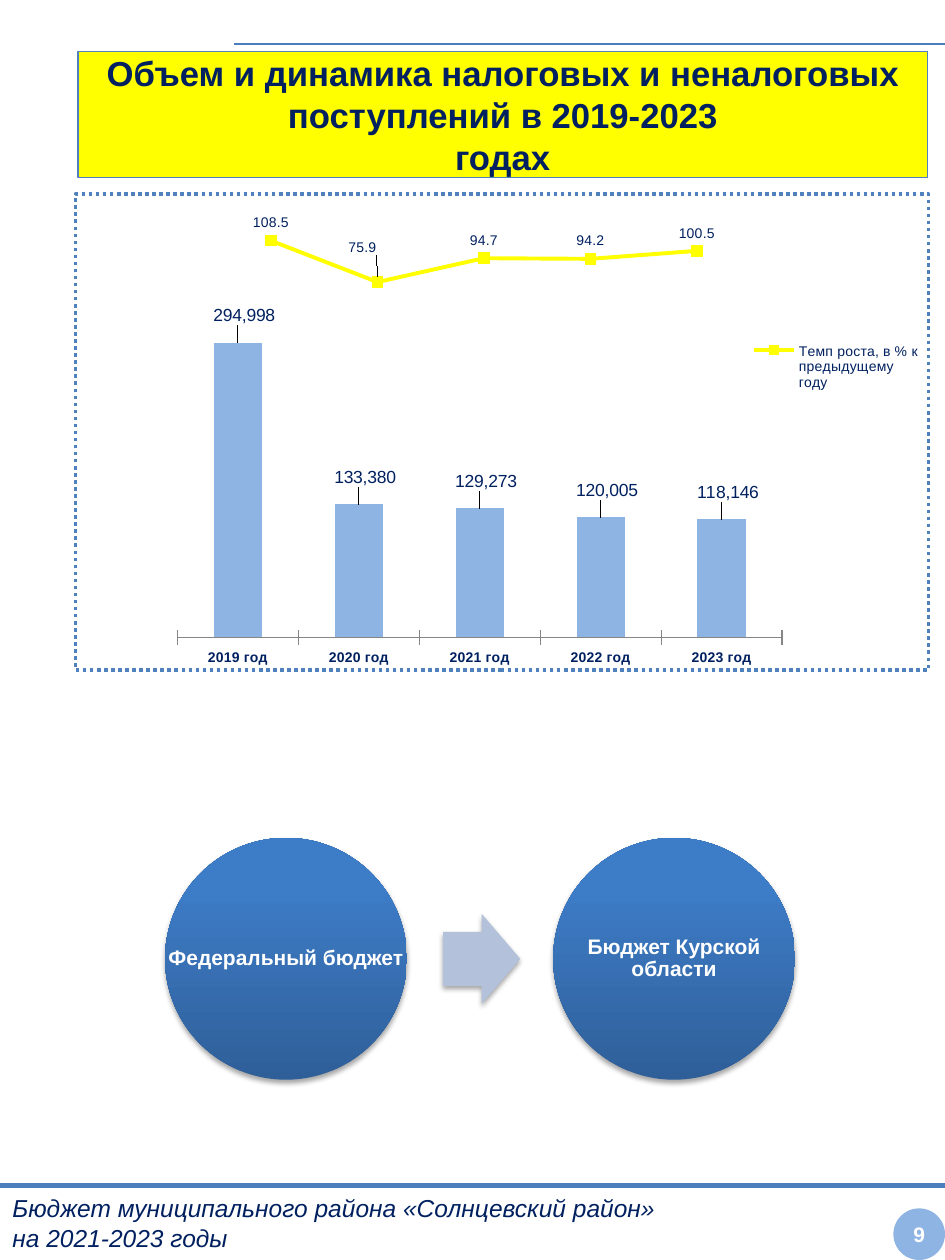
from copy import deepcopy

from lxml import etree
from pptx import Presentation
from pptx.chart.data import CategoryChartData
from pptx.dml.color import RGBColor
from pptx.enum.chart import (
    XL_CHART_TYPE as ChartType,
    XL_LABEL_POSITION as LabelPosition,
    XL_LEGEND_POSITION as LegendPosition,
    XL_MARKER_STYLE as MarkerStyle,
    XL_TICK_LABEL_POSITION as TickLabels,
    XL_TICK_MARK as TickMark,
)
from pptx.enum.dml import MSO_LINE as LineDash
from pptx.enum.shapes import MSO_CONNECTOR as Connector, MSO_SHAPE as Shape
from pptx.enum.text import MSO_ANCHOR as Anchor, MSO_AUTO_SIZE as AutoSize, PP_ALIGN as Align
from pptx.oxml import parse_xml
from pptx.oxml.ns import nsdecls, qn
from pptx.util import Pt

NAVY, WHITE, YELLOW = "002060", "FFFFFF", "FFFF00"
OUTLINE, RULE, LIGHT_BLUE = "4F81BD", "4B7EBC", "8EB4E3"
ARROW, DARK_BLUE, BRIGHT_BLUE = "B3C1DB", "2F5F99", "3D7CC7"


def color(value):
    return RGBColor.from_string(value)


def paint(fill, value):
    fill.solid()
    fill.fore_color.rgb = color(value)


def style_font(font, size, value, bold=False, italic=False):
    font.name = "Arial"
    font.size = Pt(size)
    font.color.rgb = color(value)
    font.bold, font.italic = bold, italic


def write(shape, text, size, value, align=Align.CENTER, margin=None, spacing=None, **style):
    frame = shape.text_frame
    frame.text = text
    frame.word_wrap = True
    frame.auto_size = AutoSize.NONE
    frame.vertical_anchor = Anchor.MIDDLE
    if margin is not None:
        frame.margin_left = frame.margin_right = Pt(margin)
        frame.margin_top = frame.margin_bottom = Pt(margin)
    for paragraph in frame.paragraphs:
        paragraph.alignment = align
        paragraph.line_spacing = spacing
        for run in paragraph.runs:
            style_font(run.font, size, value, **style)


def add_shape(slide, kind, box, fill):
    shape = slide.shapes.add_shape(kind, *map(Pt, box))
    shape.shadow.inherit = False
    paint(shape.fill, fill)
    shape.line.fill.background()
    return shape


def add_rule(slide, left, right, y, weight):
    line = slide.shapes.add_connector(Connector.STRAIGHT, Pt(left), Pt(y), Pt(right), Pt(y))
    line.line.color.rgb = color(RULE)
    line.line.width = Pt(weight)
    etree.SubElement(line._element.spPr, qn("a:effectLst"))


def add_soft_shadow(shape):
    effects = shape._element.spPr.find(qn("a:effectLst"))
    effects.append(parse_xml(
        f'<a:outerShdw {nsdecls("a")} blurRad="{Pt(3.1)}" dist="{Pt(1.8)}" dir="5400000" '
        'rotWithShape="0"><a:srgbClr val="000000"><a:alpha val="35000"/></a:srgbClr></a:outerShdw>'))


def manual_layout(**values):
    parts = "".join(f'<c:{key} val="{value}"/>' for key, value in values.items())
    return parse_xml(f'<c:layout {nsdecls("c")}><c:manualLayout>{parts}</c:manualLayout></c:layout>')


def set_layout(element, index, x, y, w, h, **target):
    for old in element.findall(qn("c:layout")):
        element.remove(old)
    element.insert(index, manual_layout(**target, xMode="edge", yMode="edge", x=x, y=y, w=w, h=h))


def shift_labels(labels, points, x, y):
    shared = [child for child in labels._element if child.tag != qn("c:showLeaderLines")]
    for position, point in enumerate(points):
        label = parse_xml(f'<c:dLbl {nsdecls("c")}><c:idx val="{point}"/></c:dLbl>')
        label.append(manual_layout(x=x, y=y))
        label.extend(deepcopy(child) for child in shared)
        labels._element.insert(position, label)


def add_chart(slide, kind, box, categories, name, values, number_format, plot, maximum):
    data = CategoryChartData(number_format=number_format)
    data.categories = categories
    data.add_series(name, values)
    chart = slide.shapes.add_chart(kind, *map(Pt, box), data).chart
    chart.has_title = chart.has_legend = False
    style_font(chart.font, 12, "000000")
    chart._chartSpace.find(qn("c:chart")).addnext(parse_xml(
        f'<c:spPr {nsdecls("c", "a")}><a:noFill/><a:ln><a:noFill/></a:ln></c:spPr>'))
    set_layout(chart._chartSpace.find(".//" + qn("c:plotArea")), 0, *plot, layoutTarget="inner")
    axis = chart.value_axis
    axis.minimum_scale, axis.maximum_scale = 0, maximum
    axis.has_major_gridlines = axis.visible = False
    chart.plots[0].vary_by_categories = False
    return chart


def add_labels(series, size, number_format, position):
    labels = series.data_labels
    labels.show_value = True
    labels.number_format = number_format
    labels.number_format_is_linked = False
    labels.position = position
    style_font(labels.font, size, NAVY)
    return labels


def add_revenue_chart(slide, box):
    years = [f"{year} год" for year in range(2019, 2024)]
    chart = add_chart(slide, ChartType.COLUMN_CLUSTERED, box, years, "Series 1",
                      [294998, 133380, 129273, 120005, 118146], "#,##0",
                      (0.02, 0.02, 0.96, 0.89), 350000)
    plot = chart.plots[0]
    plot.gap_width = 150
    series = plot.series[0]
    paint(series.format.fill, LIGHT_BLUE)
    labels = add_labels(series, 10, "#,##0", LabelPosition.OUTSIDE_END)
    shift_labels(labels, range(len(years)), 0.01, -0.03)
    axis = chart.category_axis
    axis.major_tick_mark = TickMark.CROSS
    axis.tick_label_position = TickLabels.LOW
    axis.format.line.color.rgb = color("868686")
    style_font(axis.tick_labels.font, 8, NAVY, bold=True)


def add_growth_chart(slide, box):
    chart = add_chart(slide, ChartType.LINE_MARKERS, box, list("12345"),
                      "Темп роста, в % к предыдущему году",
                      [108.5, 75.9, 94.7, 94.2, 100.5], "#,##0.0",
                      (0.03, 0.18, 0.71, 0.65), 120)
    chart.category_axis.visible = False
    series = chart.plots[0].series[0]
    series.smooth = False
    series.format.line.color.rgb = color(YELLOW)
    series.format.line.width = Pt(2.25)
    series.marker.style = MarkerStyle.SQUARE
    series.marker.size = 6
    paint(series.marker.format.fill, YELLOW)
    series.marker.format.line.color.rgb = color(YELLOW)
    labels = add_labels(series, 8, "#,##0.0", LabelPosition.ABOVE)
    shift_labels(labels, [1], -0.02, -0.07)
    chart.has_legend = True
    legend = chart.legend
    legend.position = LegendPosition.RIGHT
    legend.include_in_layout = False
    style_font(legend.font, 8, NAVY)
    set_layout(legend._element, 1, 0.74, 0.66, 0.23, 0.24)


def add_title(slide, box):
    title = slide.shapes.title
    title.left, title.top, title.width, title.height = map(Pt, box)
    paint(title.fill, YELLOW)
    title.line.color.rgb = color(OUTLINE)
    title.line.width = Pt(0.75)
    write(title, "Объем и динамика налоговых и неналоговых поступлений в 2019-2023\vгодах",
          19.8, NAVY, bold=True)


def add_chart_panel(slide, box):
    left, top, width, height = box
    frame = add_shape(slide, Shape.RECTANGLE, box, WHITE)
    frame.line.color.rgb = color(OUTLINE)
    frame.line.width = Pt(2)
    frame.line.dash_style = LineDash.ROUND_DOT
    add_revenue_chart(slide, (left + 51, top + 49, 360, 224.6))
    add_growth_chart(slide, (left + 68.4, top - 5.8, 428.4, 134))


def add_budget_circle(slide, box, text):
    circle = add_shape(slide, Shape.OVAL, box, BRIGHT_BLUE)
    circle.fill.gradient()
    circle.fill.gradient_angle = 90
    stops = circle.fill.gradient_stops
    for stop, position, value in zip(stops, (0, 0.8), (DARK_BLUE, BRIGHT_BLUE)):
        stop.position = position
        stop.color.rgb = color(value)
    add_soft_shadow(circle)
    caption = slide.shapes.add_textbox(*map(Pt, box))
    write(caption, text, 12, WHITE, margin=1.2, spacing=0.9, bold=True)


def add_budget_flow(slide, box):
    left, top, width, size = box
    add_budget_circle(slide, (left, top, size, size), "Федеральный бюджет")
    arrow_width, arrow_height = 44, 51.4
    arrow = add_shape(slide, Shape.RIGHT_ARROW,
                      (left + (width - arrow_width) / 2 + 1, top + (size - arrow_height) / 2,
                       arrow_width, arrow_height), ARROW)
    arrow.adjustments[0], arrow.adjustments[1] = 0.6, 0.5
    add_soft_shadow(arrow)
    add_budget_circle(slide, (left + width - size, top, size, size), "Бюджет Курской области")


def add_footer(slide, box):
    left, top, width, height = box
    caption = slide.shapes.add_textbox(*map(Pt, box))
    write(caption, "Бюджет муниципального района «Солнцевский район»\nна 2021-2023 годы",
          14, NAVY, Align.LEFT, italic=True)
    add_rule(slide, left, left + width, top, 3)
    size = 29.5
    badge = add_shape(slide, Shape.OVAL,
                      (left + width - size, top + height - size, size, size), LIGHT_BLUE)
    write(badge, "9", 12, WHITE, margin=3, bold=True)


def main():
    presentation = Presentation()
    presentation.slide_width, presentation.slide_height = Pt(540), Pt(720)
    slide = presentation.slides.add_slide(presentation.slide_layouts[5])
    add_title(slide, (44.6, 29.5, 485.3, 72))
    add_footer(slide, (0, 677.5, 540, 42.5))
    add_rule(slide, 134, 540, 25.2, 0.75)
    add_chart_panel(slide, (43.2, 110.9, 487.4, 272))
    add_budget_flow(slide, (94.3, 478.8, 360, 138.2))
    presentation.save("out.pptx")


if __name__ == "__main__":
    main()
